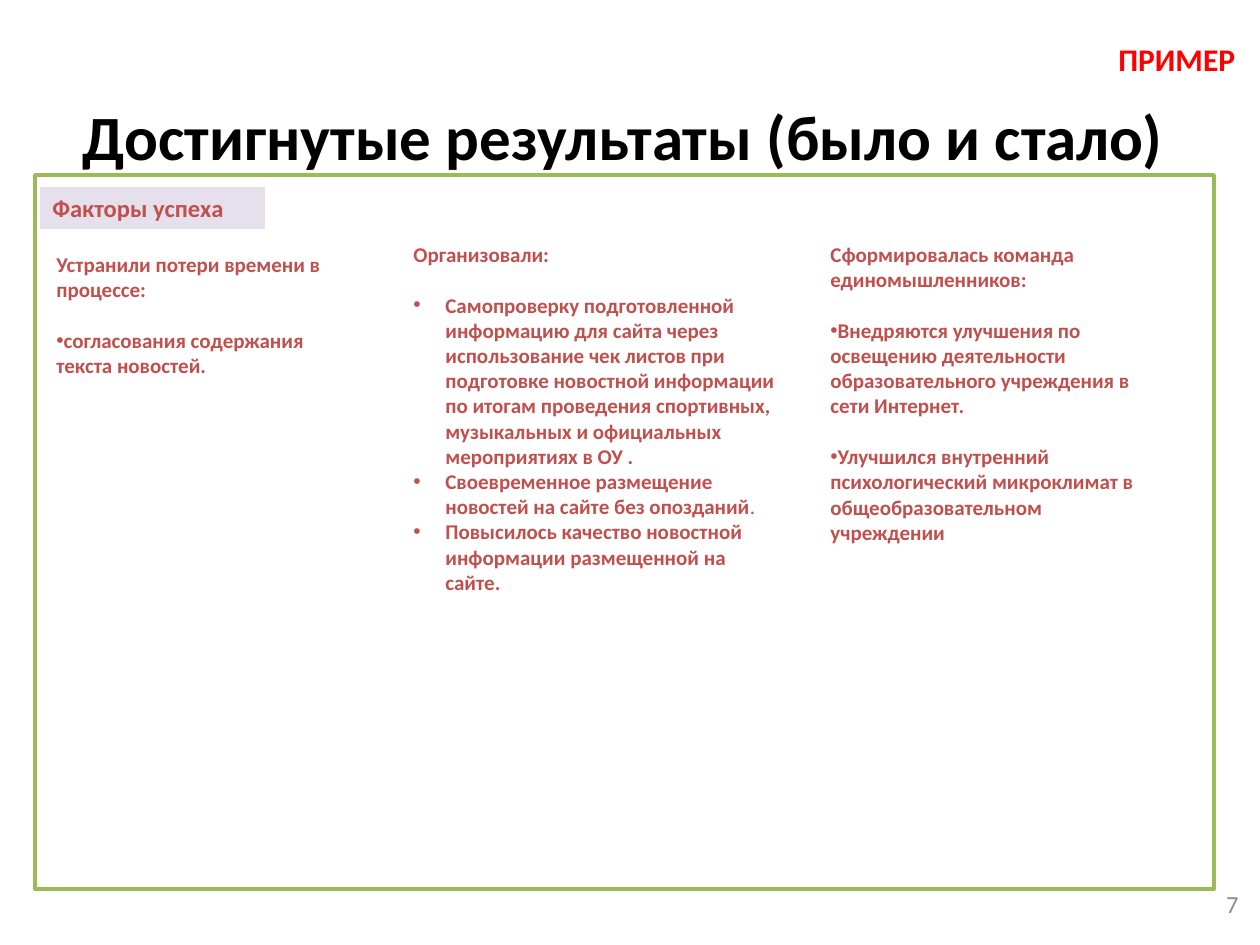
from lxml import etree
from pptx import Presentation
from pptx.dml.color import RGBColor
from pptx.enum.shapes import MSO_SHAPE
from pptx.enum.text import MSO_ANCHOR, PP_ALIGN
from pptx.oxml.ns import qn
from pptx.util import Emu, Pt

RECTANGLE = MSO_SHAPE.RECTANGLE
TOP, MIDDLE = MSO_ANCHOR.TOP, MSO_ANCHOR.MIDDLE
LEFT, CENTER, RIGHT = PP_ALIGN.LEFT, PP_ALIGN.CENTER, PP_ALIGN.RIGHT

BLACK = RGBColor(0x00, 0x00, 0x00)
WHITE = RGBColor(0xFF, 0xFF, 0xFF)
RED = RGBColor(0xFF, 0x00, 0x00)
BRICK = RGBColor(0xC0, 0x50, 0x4D)
GREEN = RGBColor(0x9B, 0xBB, 0x59)
LILAC = RGBColor(0xE6, 0xE0, 0xEC)
GRAY = RGBColor(0x8C, 0x8C, 0x8C)

PX = 914400 / 126
BLANK_LAYOUT = 6


def px(length):
    return Emu(round(length * PX))


class SlideBuilder:
    font = "Calibri"
    body_size = 12
    line_gap = Pt(14.65)  # one line of body text
    hanging = 32

    def __init__(self, slide):
        self.slide = slide

    def style_run(self, run, size, color, bold=True):
        run.font.name = self.font
        run.font.size = Pt(size)
        run.font.bold = bold
        run.font.color.rgb = color

    def fill_frame(self, frame, text, size, color, bold=True, align=LEFT, anchor=TOP):
        frame.word_wrap = True
        frame.vertical_anchor = anchor
        frame.text = text
        paragraph = frame.paragraphs[0]
        paragraph.alignment = align
        self.style_run(paragraph.runs[0], size, color, bold)

    def text(self, box, text, size, color, **layout):
        frame = self.slide.shapes.add_textbox(*map(px, box)).text_frame
        self.fill_frame(frame, text, size, color, **layout)
        return frame

    def rectangle(self, box, fill, line=None):
        shape = self.slide.shapes.add_shape(RECTANGLE, *map(px, box))
        shape.shadow.inherit = False
        shape.fill.solid()
        shape.fill.fore_color.rgb = fill
        if line is None:
            shape.line.fill.background()
        else:
            shape.line.color.rgb = line
            shape.line.width = Pt(2)
        return shape

    def bullet(self, paragraph, indent):
        properties = paragraph._p.get_or_add_pPr()
        properties.set("marL", str(px(indent)))
        properties.set("indent", str(-px(indent)))
        etree.SubElement(properties, qn("a:buFont"), typeface="Arial")
        etree.SubElement(properties, qn("a:buChar"), char="•")

    def factor(self, box, heading, items, indent=0, spaced=True):
        """Heading with bullets; spaced puts a gap before every bullet."""
        frame = self.text(box, heading, self.body_size, BRICK)
        for index, item in enumerate(items):
            paragraph = frame.add_paragraph()
            paragraph.text = item
            self.style_run(paragraph.runs[0], self.body_size, BRICK)
            if spaced or index == 0:
                paragraph.space_before = self.line_gap
            self.bullet(paragraph, indent)
        return frame


def main():
    presentation = Presentation()
    presentation.slide_width, presentation.slide_height = px(1260), px(945)
    layout = presentation.slide_layouts[BLANK_LAYOUT]
    builder = SlideBuilder(presentation.slides.add_slide(layout))

    # Title
    builder.text((34, 105, 1192, 60), "Достигнутые результаты (было и стало) ",
                 36, BLACK, align=CENTER, anchor=MIDDLE)

    # Frame and its label
    builder.rectangle((35, 175, 1179, 714), WHITE, GREEN)
    label = builder.rectangle((40, 187, 225, 42), LILAC)
    builder.fill_frame(label.text_frame, "Факторы успеха", 14, BRICK)

    # Success factors
    builder.factor((44, 245, 290, 165), "Устранили потери времени в процессе:",
                   ["согласования содержания текста новостей."])
    organised = builder.factor((401, 235, 392, 420), "Организовали:", [
        "Самопроверку подготовленной информацию для сайта через использование "
        "чек листов при подготовке новостной информации по итогам проведения "
        "спортивных, музыкальных и официальных мероприятиях в ОУ .",
        "Своевременное размещение новостей на сайте без опозданий",
        "Повысилось качество новостной информации размещенной на сайте.",
    ], indent=builder.hanging, spaced=False)
    full_stop = organised.paragraphs[2].add_run()
    full_stop.text = "."
    builder.style_run(full_stop, builder.body_size, BRICK, bold=False)
    builder.factor((818, 235, 348, 344), "Сформировалась команда единомышленников:", [
        "Внедряются улучшения по освещению деятельности образовательного "
        "учреждения в сети Интернет.",
        "Улучшился внутренний психологический микроклимат в "
        "общеобразовательном учреждении",
    ])

    # Page number and example mark
    builder.text((958, 879, 293, 50), "7", 14, GRAY,
                 bold=False, align=RIGHT, anchor=MIDDLE)
    builder.text((1106, 34, 146, 50), "ПРИМЕР", 18, RED)

    presentation.save("out.pptx")


if __name__ == "__main__":
    main()
